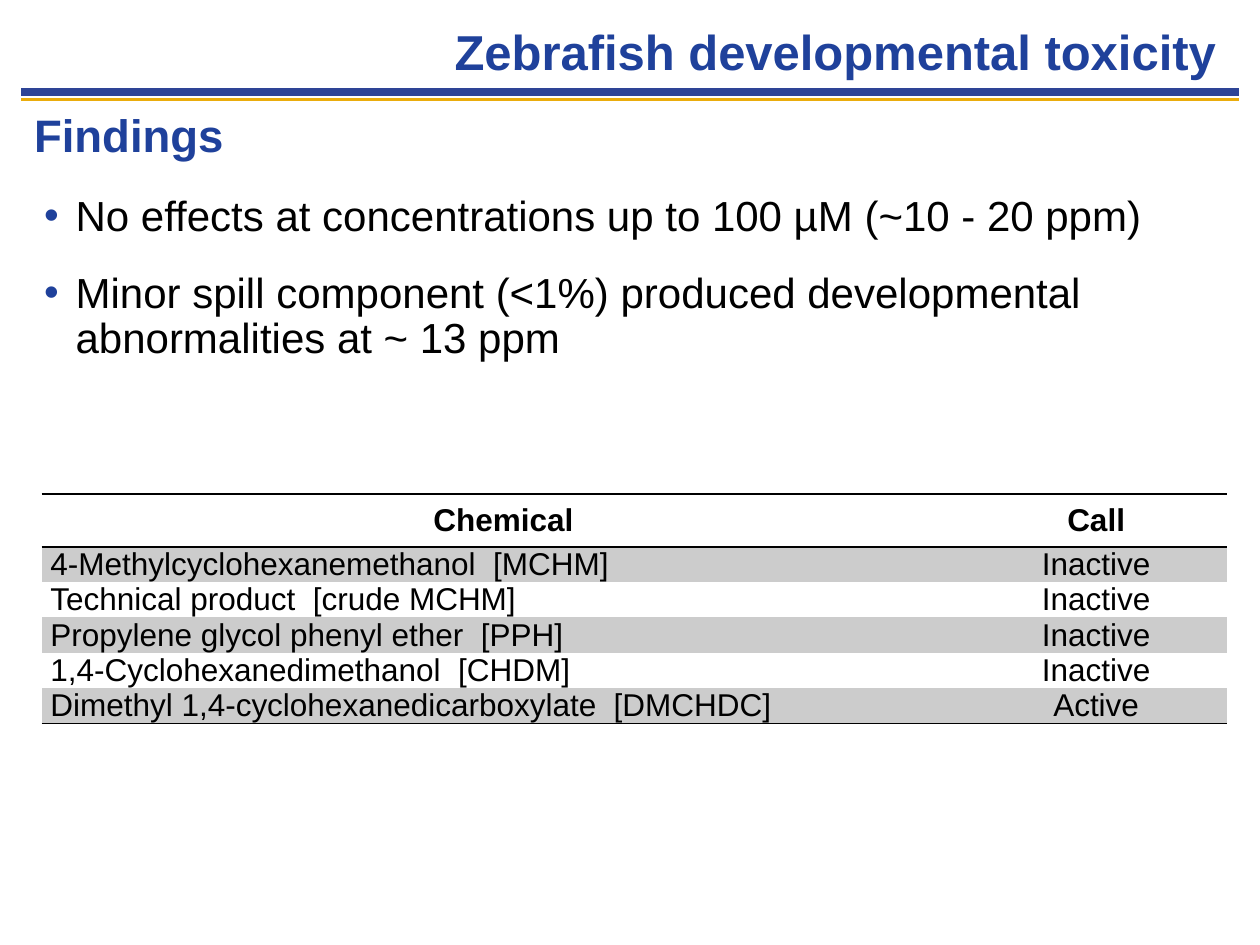
from lxml import etree
from pptx import Presentation
from pptx.dml.color import RGBColor
from pptx.enum.shapes import MSO_CONNECTOR
from pptx.enum.text import MSO_ANCHOR, MSO_AUTO_SIZE, PP_ALIGN
from pptx.oxml import parse_xml
from pptx.oxml.ns import nsdecls, qn
from pptx.util import Inches, Pt

FONT = "Arial"
BLUE = RGBColor(0x1F, 0x41, 0x9B)
RULE_BLUE = RGBColor(0x2E, 0x44, 0x96)
GOLD = RGBColor(0xEA, 0xAC, 0x0C)
BLACK = RGBColor(0, 0, 0)
BAND_GRAY = RGBColor(0xCC, 0xCC, 0xCC)
LEFT, CENTER, RIGHT = PP_ALIGN.LEFT, PP_ALIGN.CENTER, PP_ALIGN.RIGHT
STRAIGHT = MSO_CONNECTOR.STRAIGHT
NO_GRID_STYLE = "{2D5ABB26-0587-4C30-8999-92F81FD0307C}"

TITLE = "Zebrafish developmental toxicity"
HEADING = "Findings"
FINDINGS = [
    "No effects at concentrations up to 100 µM (~10 - 20 ppm)",
    "Minor spill component (<1%) produced developmental abnormalities at ~ 13 ppm",
]
CALLS = [
    ("Chemical", "Call"),
    ("4-Methylcyclohexanemethanol  [MCHM]", "Inactive"),
    ("Technical product  [crude MCHM]", "Inactive"),
    ("Propylene glycol phenyl ether  [PPH]", "Inactive"),
    ("1,4-Cyclohexanedimethanol  [CHDM]", "Inactive"),
    ("Dimethyl 1,4-cyclohexanedicarboxylate  [DMCHDC]", "Active"),
]
RULES = [(0.79, GOLD, 2.25), (0.73, RULE_BLUE, 4.5)]
COLUMN_WIDTHS = (7.33, 2.08)
HEADER_HEIGHT, ROW_HEIGHT = 0.42, 0.28


def add_text(paragraph, text, size, color, bold=False, align=LEFT):
    paragraph.alignment = align
    run = paragraph.add_run()
    run.text = text
    run.font.name = FONT
    run.font.size = Pt(size)
    run.font.bold = bold
    run.font.color.rgb = color


def place(placeholder, left, top, width, height, anchor):
    placeholder.left, placeholder.top = Inches(left), Inches(top)
    placeholder.width, placeholder.height = Inches(width), Inches(height)
    frame = placeholder.text_frame
    frame.word_wrap = True
    frame.auto_size = MSO_AUTO_SIZE.NONE
    frame.vertical_anchor = anchor
    return frame


def format_list_paragraph(paragraph, bullet, space_before):
    """Set the hanging indent, spacing and bullet of a body paragraph."""
    paragraph.line_spacing = 0.9
    paragraph.space_before = Pt(space_before)
    properties = paragraph._p.get_or_add_pPr()
    properties.set("marL", str(Inches(0.25)))
    properties.set("indent", str(-Inches(0.25)))
    if bullet:
        color = etree.SubElement(properties, qn("a:buClr"))
        etree.SubElement(color, qn("a:srgbClr")).set("val", str(BLUE))
        etree.SubElement(properties, qn("a:buChar")).set("char", "•")
    else:
        etree.SubElement(properties, qn("a:buNone"))


def add_border(cell, side):
    cell._tc.get_or_add_tcPr().append(parse_xml(
        f'<a:{side} {nsdecls("a")} w="{Pt(1)}"><a:solidFill>'
        f'<a:srgbClr val="{BLACK}"/></a:solidFill></a:{side}>'))


def add_rule(slide, y, color, weight):
    rule = slide.shapes.add_connector(
        STRAIGHT, Inches(0.17), Inches(y), Inches(9.83), Inches(y))
    rule.line.color.rgb = color
    rule.line.width = Pt(weight)
    etree.SubElement(rule._element.spPr, qn("a:effectLst"))


def add_call_table(slide):
    last = len(CALLS) - 1
    frame = slide.shapes.add_table(
        len(CALLS), len(COLUMN_WIDTHS), Inches(0.33), Inches(3.92),
        Inches(sum(COLUMN_WIDTHS)), Inches(HEADER_HEIGHT + last * ROW_HEIGHT))
    table = frame.table
    table._tbl.tblPr.find(qn("a:tableStyleId")).text = NO_GRID_STYLE
    table.horz_banding = False
    for column, width in zip(table.columns, COLUMN_WIDTHS):
        column.width = Inches(width)
    for r, values in enumerate(CALLS):
        header = r == 0
        table.rows[r].height = Inches(HEADER_HEIGHT if header else ROW_HEIGHT)
        for c, value in enumerate(values):
            cell = table.cell(r, c)
            cell.vertical_anchor = MSO_ANCHOR.MIDDLE
            cell.margin_left = cell.margin_right = Inches(0.07)
            cell.margin_top = cell.margin_bottom = 0
            if header:
                add_border(cell, "lnT")
            if r in (0, last):
                add_border(cell, "lnB")
            if r % 2:
                cell.fill.solid()
                cell.fill.fore_color.rgb = BAND_GRAY
            else:
                cell.fill.background()
            add_text(cell.text_frame.paragraphs[0], value, 18, BLACK, header,
                     CENTER if header or c else LEFT)


def main():
    deck = Presentation()
    deck.slide_width, deck.slide_height = Inches(10), Inches(7.5)
    slide = deck.slides.add_slide(deck.slide_layouts.get_by_name("Two Content"))
    title, heading, findings = slide.placeholders

    for rule in RULES:
        add_rule(slide, *rule)

    title_frame = place(title, 1.42, 0, 8.33, 0.69, MSO_ANCHOR.BOTTOM)
    add_text(title_frame.paragraphs[0], TITLE, 28, BLUE, True, RIGHT)

    heading_frame = place(heading, 0.17, 0.85, 8.92, 0.42, MSO_ANCHOR.TOP)
    format_list_paragraph(heading_frame.paragraphs[0], False, 0)
    add_text(heading_frame.paragraphs[0], HEADING, 26, BLUE, True)

    findings_frame = place(findings, 0.25, 1.5, 9.33, 2.58, MSO_ANCHOR.TOP)
    for i, finding in enumerate(FINDINGS):
        paragraph = findings_frame.add_paragraph() if i else findings_frame.paragraphs[0]
        format_list_paragraph(paragraph, True, 18 if i else 0)
        add_text(paragraph, finding, 24, BLACK)

    add_call_table(slide)
    deck.save("out.pptx")


if __name__ == "__main__":
    main()
